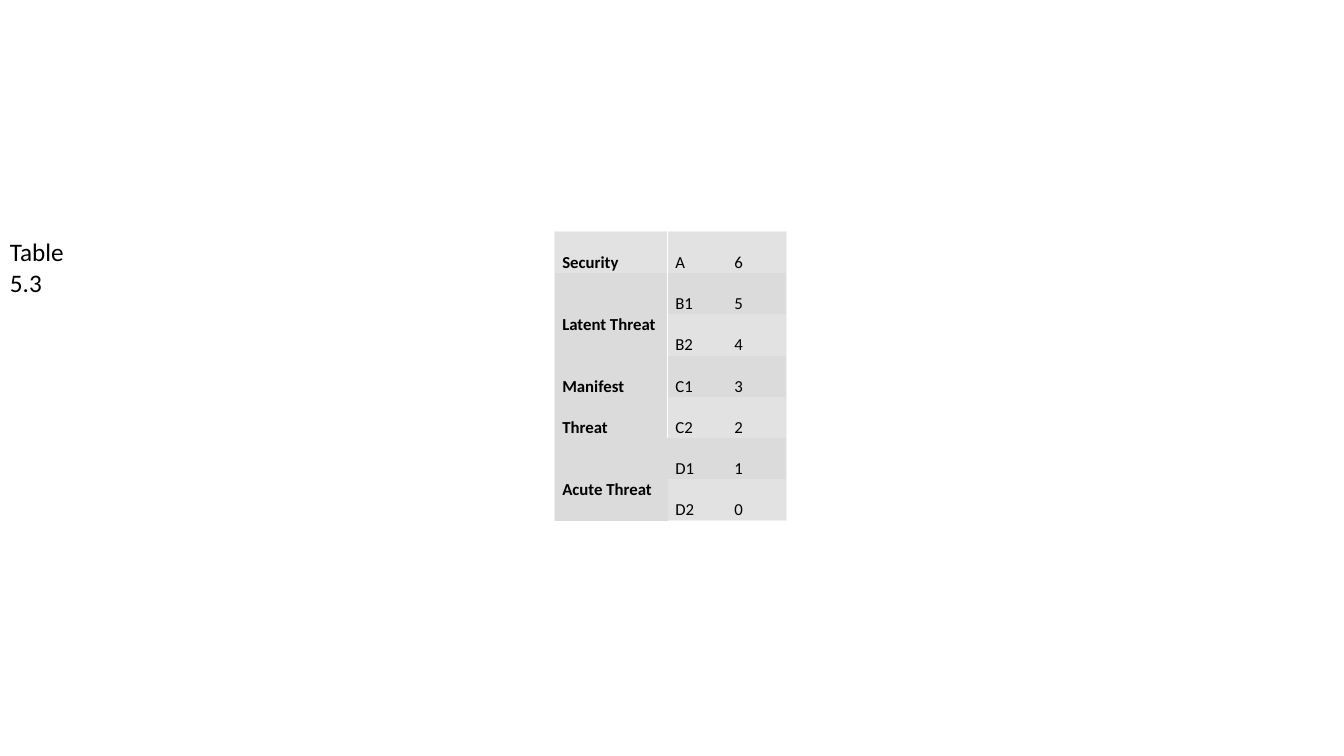
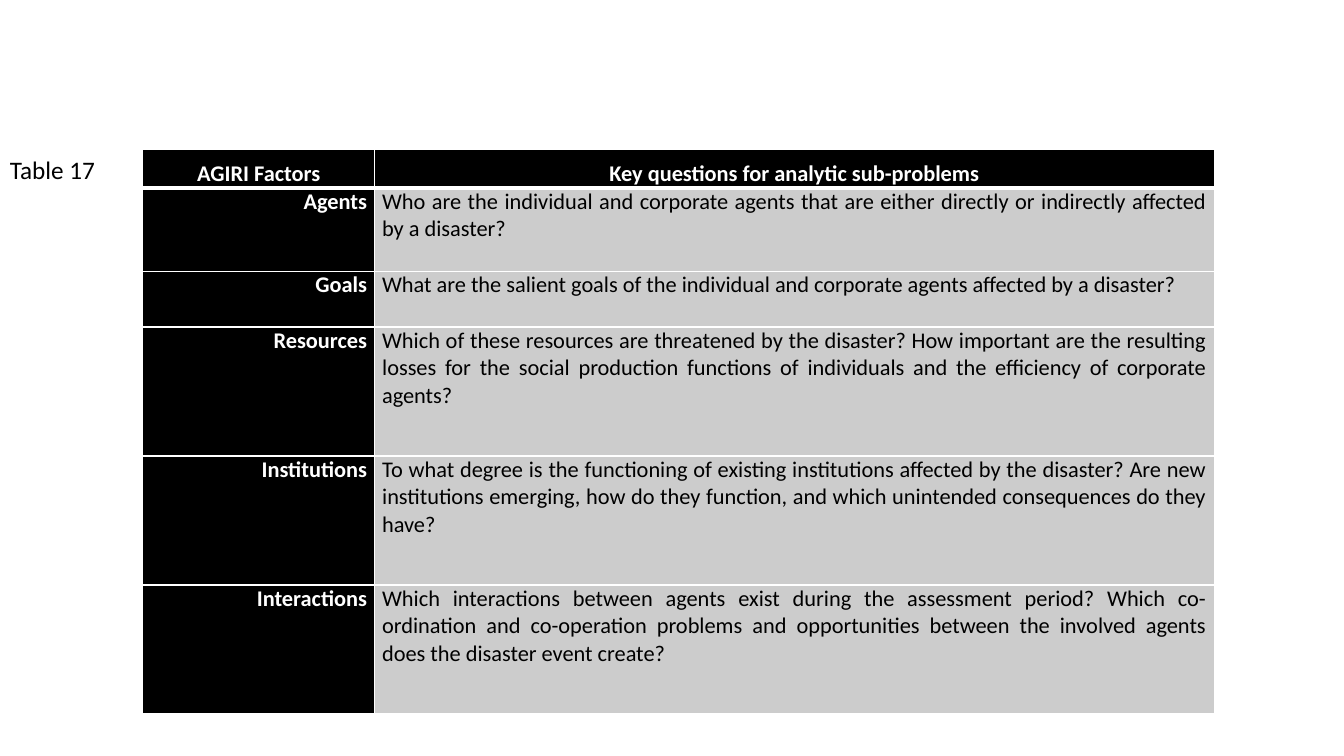
from lxml import etree
from pptx import Presentation
from pptx.dml.color import RGBColor
from pptx.enum.text import MSO_ANCHOR, PP_ALIGN
from pptx.oxml.ns import qn
from pptx.util import Cm, Pt

TOP, MIDDLE, BOTTOM = MSO_ANCHOR.TOP, MSO_ANCHOR.MIDDLE, MSO_ANCHOR.BOTTOM
LEFT, CENTER, RIGHT, JUSTIFY = (PP_ALIGN.LEFT, PP_ALIGN.CENTER,
                                PP_ALIGN.RIGHT, PP_ALIGN.JUSTIFY)
BLANK_LAYOUT = 6

THREAT_LEVELS = [
    ("Security", "A", "6"),
    ("Latent Threat", "B1", "5"),
    ("", "B2", "4"),
    ("Manifest Threat", "C1", "3"),
    ("", "C2", "2"),
    ("Acute Threat", "D1", "1"),
    ("", "D2", "0"),
]

AGIRI_FACTORS = [
    ("AGIRI Factors", "Key questions for analytic sub-problems"),
    ("Agents", "Who are the individual and corporate agents that are either "
               "directly or indirectly affected by a disaster?"),
    ("Goals", "What are the salient goals of the individual and corporate "
              "agents affected by a disaster?"),
    ("Resources", "Which of these resources are threatened by the disaster? "
                  "How important are the resulting losses for the social "
                  "production functions of individuals and the efficiency of "
                  "corporate agents?"),
    ("Institutions", "To what degree is the functioning of existing "
                     "institutions affected by the disaster? Are new "
                     "institutions emerging, how do they function, and which "
                     "unintended consequences do they have?"),
    ("Interactions", "Which interactions between agents exist during the "
                     "assessment period? Which co-ordination and co-operation "
                     "problems and opportunities between the involved agents "
                     "does the disaster event create?"),
]


def color(value):
    return RGBColor.from_string(value)


class Deck:
    FONT = "Calibri"
    BLACK, WHITE = "000000", "FFFFFF"
    GRAY, LIGHT, DARK, OUTLINE = "CCCCCC", "E2E2E2", "DBDBDB", "EFEFEF"

    def __init__(self):
        self.prs = Presentation()
        self.prs.slide_width, self.prs.slide_height = Cm(33.87), Cm(19.05)
        self.s = None

    def slide(self):
        self.s = self.prs.slides.add_slide(self.prs.slide_layouts[BLANK_LAYOUT])

    def style(self, p, size, fill, bold=False):
        for r in p.runs:
            r.font.name, r.font.size, r.font.bold = self.FONT, Pt(size), bold
            r.font.color.rgb = color(fill)

    def label(self, text, top):
        tf = self.s.shapes.add_textbox(0, Cm(top), Cm(2.8), Cm(1.02)).text_frame
        tf.word_wrap = False
        tf.text = text
        self.style(tf.paragraphs[0], 18, self.BLACK)

    def table(self, left, top, widths, heights):
        frame = self.s.shapes.add_table(
            len(heights), len(widths), Cm(left), Cm(top),
            Cm(sum(widths)), Cm(sum(heights)))
        table = frame.table
        table.first_row = table.horz_banding = False
        for column, width in zip(table.columns, widths):
            column.width = Cm(width)
        for row, height in zip(table.rows, heights):
            row.height = Cm(height)
        return table

    def cell(self, cell, text, size, fill, font_color=BLACK, bold=False,
             align=LEFT, anchor=TOP, spacing=1.0, borders=None):
        """Fill one cell; borders maps L, R, T, B to (colour, points)."""
        cell.margin_left = cell.margin_right = Cm(0.19)
        cell.margin_top = cell.margin_bottom = 0
        cell.vertical_anchor = anchor
        cell.text_frame.text = text
        p = cell.text_frame.paragraphs[0]
        p.alignment, p.line_spacing = align, spacing
        self.style(p, size, font_color, bold)
        cell.fill.solid()
        cell.fill.fore_color.rgb = color(fill)
        self.borders(cell, borders or {})

    def borders(self, cell, borders):
        """Set all four edges; an edge that is not given gets no line."""
        props = cell._tc.get_or_add_tcPr()
        for i, edge in enumerate("LRTB"):
            line = etree.Element(qn(f"a:ln{edge}"))
            if edge in borders:
                value, width = borders[edge]
                line.set("w", str(Pt(width)))
                solid = etree.SubElement(line, qn("a:solidFill"))
                etree.SubElement(solid, qn("a:srgbClr"), val=value)
            else:
                etree.SubElement(line, qn("a:noFill"))
            props.insert(i, line)


def threat_slide(deck):
    deck.slide()
    last = len(THREAT_LEVELS) - 1
    table = deck.table(13.98, 5.84, [2.85, 1.49, 1.49],
                       [1.04] * len(THREAT_LEVELS))
    outline, divider = (deck.OUTLINE, 0.5), (deck.WHITE, 1)
    for i, row in enumerate(THREAT_LEVELS):
        for j, text in enumerate(row):
            borders = {}
            if i == 0:
                borders["T"] = outline
            if i == last:
                borders["B"] = outline
            if j == 0:
                borders["L"] = outline
            if j == 2:
                borders["R"] = outline
            if i < 5 and j < 2:
                borders["R" if j == 0 else "L"] = divider
            light = i == 0 or (j > 0 and i % 2 == 0)
            deck.cell(table.cell(i, j), text, 12,
                      deck.LIGHT if light else deck.DARK, bold=j == 0,
                      anchor=MIDDLE, spacing=2.0, borders=borders)
    for i in range(1, last, 2):
        table.cell(i, 0).merge(table.cell(i + 1, 0))
    deck.label("Table 5.3", 5.84)


def agiri_slide(deck):
    deck.slide()
    deck.label("Table 17", 3.76)
    table = deck.table(3.6, 3.76, [5.84, 21.16],
                       [0.97, 2.11, 1.4] + [3.25] * 3)
    for i, row in enumerate(AGIRI_FACTORS):
        for j, text in enumerate(row):
            header = i == 0
            dark = header or j == 0
            borders = dict.fromkeys("LRTB", (deck.WHITE, 1))
            if i < 2:
                borders["B" if header else "T"] = (deck.WHITE, 3)
            deck.cell(table.cell(i, j), text, 16,
                      deck.BLACK if dark else deck.GRAY,
                      deck.WHITE if dark else deck.BLACK, bold=dark,
                      align=CENTER if header else (RIGHT, JUSTIFY)[j],
                      anchor=BOTTOM if header else TOP, borders=borders)


def main():
    deck = Deck()
    threat_slide(deck)
    agiri_slide(deck)
    deck.prs.save("out.pptx")


if __name__ == "__main__":
    main()
